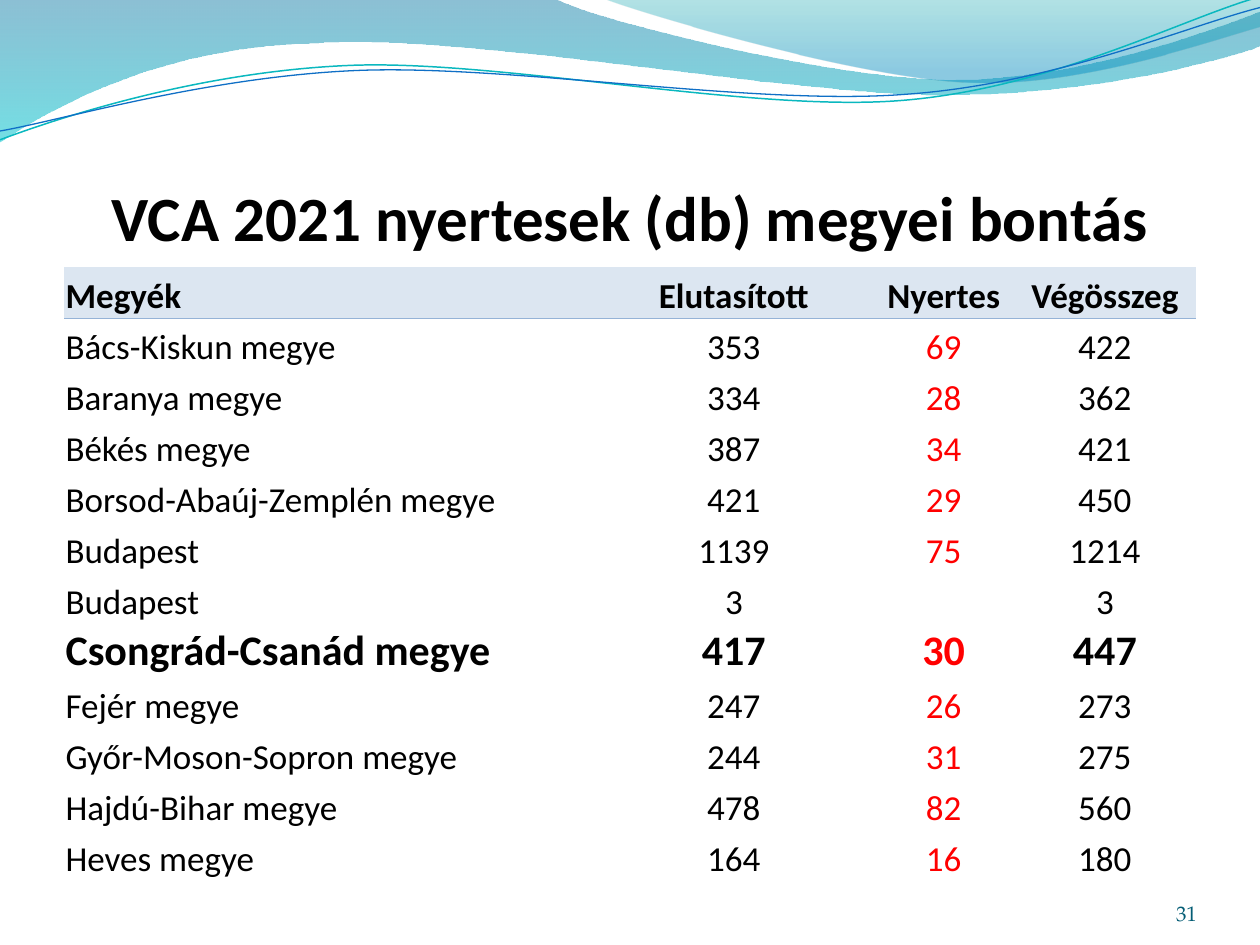
from lxml.etree import SubElement
from pptx import Presentation
from pptx.dml.color import RGBColor
from pptx.enum.text import MSO_ANCHOR, PP_ALIGN
from pptx.oxml.ns import qn
from pptx.util import Pt

PX = 9144  # EMU in one px, 100 px to the inch
PLAIN = "{2D5ABB26-0587-4C30-8999-92F81FD0307C}"  # table style without grid

BLACK = RGBColor(0x00, 0x00, 0x00)
RED = RGBColor(0xFF, 0x00, 0x00)
PALE = RGBColor(0xDC, 0xE6, 0xF1)
RULE = RGBColor(0x95, 0xB3, 0xD7)
PAGE = RGBColor(0x04, 0x5D, 0x75)
NAVY = RGBColor(0x00, 0x74, 0xA1)
CYAN = RGBColor(0x00, 0xC6, 0xCF)
TEAL = RGBColor(0x00, 0xA1, 0xA9)
AZURE = RGBColor(0x00, 0x8B, 0xBF)
MINT = RGBColor(0x0A, 0xB8, 0xBF)
BLUE = RGBColor(0x0F, 0x6F, 0xC6)

# Each step is a line (x, y) or a curve (two controls and an end).
WIDE = [(0, 0), (440, -1), (476, 17, 664, 63, 758, 63),
        (853, 63, 958, 26, 1000, 9), (1001, 36),
        (983, 44, 870, 76, 746, 75), (622, 75, 382, 28, 257, 34),
        (129, 36, 46, 83, -1, 113)]
SMALL = [(479, -1), (509, 11, 682, 62, 769, 65),
         (856, 69, 961, 32, 1000, 21), (1000, 0)]
UPPER = [(0, 111), (48, 93, 158, 57, 277, 52),
         (395, 47, 593, 89, 713, 80), (833, 71, 938, 15, 998, -2)]
LOWER = [(0, 104), (47, 96, 164, 61, 283, 56),
         (403, 51, 597, 84, 717, 75), (836, 67, 941, 21, 1000, 6)]

HEAD = ("Megyék", "Elutasított", "Nyertes", "Végösszeg")
ROWS = [
    ("Bács-Kiskun megye", "353", "69", "422"),
    ("Baranya megye", "334", "28", "362"),
    ("Békés megye", "387", "34", "421"),
    ("Borsod-Abaúj-Zemplén megye", "421", "29", "450"),
    ("Budapest", "1139", "75", "1214"),
    ("Budapest", "3", "", "3"),
    ("Csongrád-Csanád megye", "417", "30", "447"),
    ("Fejér megye", "247", "26", "273"),
    ("Győr-Moson-Sopron megye", "244", "31", "275"),
    ("Hajdú-Bihar megye", "478", "82", "560"),
    ("Heves megye", "164", "16", "180"),
]
HOME = "Csongrád-Csanád megye"  # the row set large and bold
TALL = 42  # height of that row
COLS = (421, 221, 112, 144)


def put(frame, text, size=20, font="Calibri", color=BLACK, bold=False,
        align=PP_ALIGN.LEFT):
    para = frame.paragraphs[0]
    para.alignment = align
    run = para.add_run()
    run.text = text
    run.font.size = Pt(size)
    run.font.name = font
    run.font.bold = bold
    run.font.color.rgb = color


def label(slide, box, text, drop=0, **style):
    """Add a text box whose text sits on its lower edge."""
    frame = slide.shapes.add_textbox(*(n * PX for n in box)).text_frame
    frame.word_wrap = True
    frame.vertical_anchor = MSO_ANCHOR.BOTTOM
    frame.margin_left = frame.margin_right = frame.margin_bottom = 0
    frame.margin_top = drop * PX
    put(frame, text, **style)


def draw(slide, box, steps, close):
    """Add an outline, then bend each run of three lines into its curve."""
    left, top = box[:2]
    dots = [(left + step[i], top + step[i + 1])
            for step in steps for i in range(0, len(step), 2)]
    pen = slide.shapes.build_freeform(*dots[0], scale=PX)
    pen.add_line_segments(dots[1:], close=close)
    shape = pen.convert_to_shape()
    shape.shadow.inherit = False
    lines = iter(list(shape.element.iter(qn("a:lnTo"))))
    for step in steps[1:]:
        if len(step) == 2:
            next(lines)
            continue
        parts = [next(lines) for _ in range(3)]
        curve = SubElement(parts[0].getparent(), qn("a:cubicBezTo"))
        parts[0].addprevious(curve)
        for part in parts:
            curve.append(part[0])
            part.getparent().remove(part)
    return shape


def wave(slide, box, steps, stops):
    """Add a filled wave; stops are (place, colour, percent opaque)."""
    shape = draw(slide, box, steps, True)
    shape.line.fill.background()
    fill = shape.fill
    fill.gradient()
    fill.gradient_angle = 270
    for stop, (place, color, alpha) in zip(fill.gradient_stops, stops):
        stop.position = place
        stop.color.rgb = color
    tints = shape.element.spPr.iter(qn("a:srgbClr"))
    for tint, (place, color, alpha) in zip(tints, stops):
        SubElement(tint, qn("a:alpha"), val=str(alpha * 1000))


def thread(slide, box, steps, color, width):
    shape = draw(slide, box, steps, False)
    shape.fill.background()
    shape.line.color.rgb = color
    shape.line.width = Pt(width)


def banner(slide, box):
    wave(slide, box, WIDE, ((0, NAVY, 45), (1, CYAN, 55)))
    wave(slide, box, SMALL, ((0, TEAL, 30), (0.8, AZURE, 45)))
    thread(slide, box, UPPER, MINT, 0.85)
    thread(slide, box, LOWER, BLUE, 0.75)


def edge(cell, ruled):
    """Rule one side of a cell and clear the rest, before its fill is set."""
    for side in ("lnL", "lnR", "lnT", "lnB"):
        line = SubElement(cell._tc.get_or_add_tcPr(), qn("a:" + side))
        if side == ruled:
            line.set("w", str(Pt(0.5)))
            fill = SubElement(line, qn("a:solidFill"))
            SubElement(fill, qn("a:srgbClr"), val=str(RULE))
        else:
            SubElement(line, qn("a:noFill"))


def grid(slide, box):
    lines = [HEAD] + ROWS
    table = slide.shapes.add_table(len(lines), len(COLS),
                                   *(n * PX for n in box)).table
    table.first_row = table.horz_banding = False
    table._tbl.tblPr[0].text = PLAIN
    for col, width in zip(table.columns, COLS):
        col.width = width * PX
    for r, line in enumerate(lines):
        home = line[0] == HOME
        table.rows[r].height = TALL * PX if home else box[3] * PX // len(lines)
        for c, text in enumerate(line):
            cell = table.cell(r, c)
            cell.vertical_anchor = MSO_ANCHOR.BOTTOM
            cell.margin_left = cell.margin_right = Pt(0.75)
            cell.margin_top = Pt(0.75)
            cell.margin_bottom = 0
            edge(cell, {0: "lnB", 1: "lnT"}.get(r))
            if r == 0:
                cell.fill.solid()
                cell.fill.fore_color.rgb = PALE
            else:
                cell.fill.background()
            if text:
                put(cell.text_frame, text, size=24 if home else 20,
                    bold=home or r == 0,
                    color=RED if r and c == 2 else BLACK,
                    align=PP_ALIGN.CENTER if c else PP_ALIGN.LEFT)


def main():
    deck = Presentation()
    deck.slide_width, deck.slide_height = 1000 * PX, 750 * PX
    slide = deck.slides.add_slide(deck.slide_layouts[6])
    banner(slide, (0, 0, 1000, 113))
    label(slide, (50, 77, 900, 125), "VCA 2021 nyertesek (db) megyei bontás",
          drop=5, size=36, bold=True, align=PP_ALIGN.CENTER)
    grid(slide, (51, 212, 898, 486))
    label(slide, (867, 695, 83, 40), "31", size=12, font="TeX Gyre Pagella",
          color=PAGE, align=PP_ALIGN.RIGHT)
    deck.save("out.pptx")


if __name__ == "__main__":
    main()
